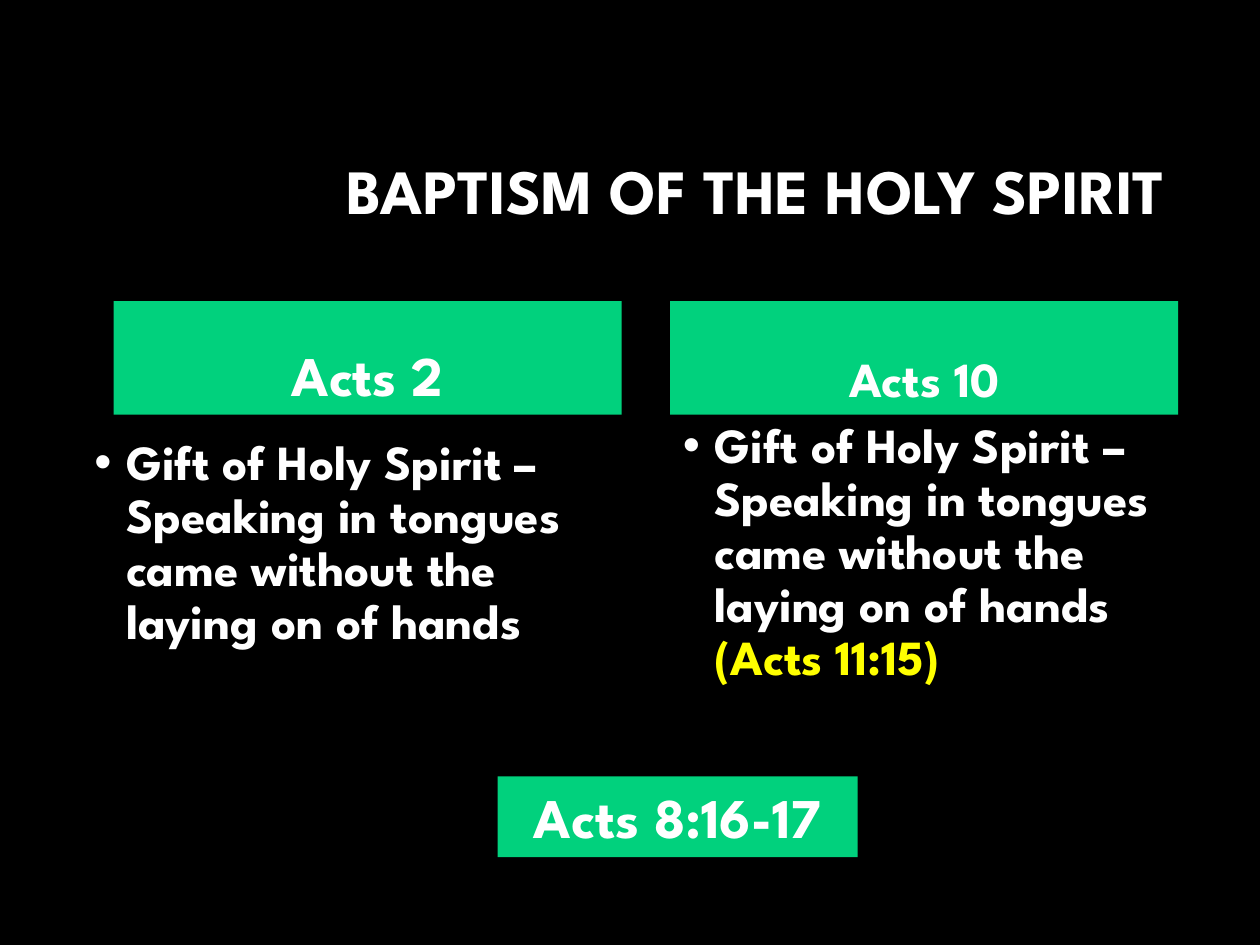
from pptx import Presentation
from pptx.dml.color import RGBColor
from pptx.enum.text import MSO_ANCHOR, MSO_AUTO_SIZE, PP_ALIGN
from pptx.util import Cm, Pt

BLACK = RGBColor(0x00, 0x00, 0x00)
WHITE = RGBColor(0xFF, 0xFF, 0xFF)
GREEN = RGBColor(0x01, 0xD1, 0x7D)
YELLOW = RGBColor(0xFF, 0xFF, 0x00)
FONT = "League Spartan"

TITLE = "BAPTISM OF THE HOLY SPIRIT"
GIFT = "Gift of Holy Spirit – Speaking in tongues came without the laying on of hands"
HEADS = [
    (1, "Acts 2", 32, 2.29),
    (3, "Acts 10", 28, 13.51),
]
LISTS = [
    (2, [(GIFT, WHITE)], 1.65, 8.71),
    (4, [(GIFT + " ", WHITE), ("(Acts 11:15)", YELLOW)], 13.51, 8.36),
]
NOTE = "Acts 8:16-17"


def place(shape, left, top, width, height):
    shape.left, shape.top = Cm(left), Cm(top)
    shape.width, shape.height = Cm(width), Cm(height)


def write(shape, parts, size, align, anchor, space=0.9):
    frame = shape.text_frame
    frame.word_wrap = True
    frame.auto_size = MSO_AUTO_SIZE.NONE
    frame.vertical_anchor = anchor
    para = frame.paragraphs[0]
    para.alignment = align
    para.line_spacing = space
    para.space_before = Pt(0)
    for text, color in parts:
        run = para.add_run()
        run.text = text
        run.font.name = FONT
        run.font.size = Pt(size)
        run.font.bold = True
        run.font.color.rgb = color
    return para


def paint(shape):
    shape.fill.solid()
    shape.fill.fore_color.rgb = GREEN


def main():
    deck = Presentation()
    deck.slide_width, deck.slide_height = Cm(25.4), Cm(19.05)
    slide = deck.slides.add_slide(deck.slide_layouts.get_by_name("Comparison"))
    slide.background.fill.solid()
    slide.background.fill.fore_color.rgb = BLACK
    holders = {item.placeholder_format.idx: item for item in slide.placeholders}

    title = slide.shapes.title
    place(title, 6.05, 2.11, 17.7, 3.61)
    write(title, [(TITLE, WHITE)], 36, PP_ALIGN.RIGHT, MSO_ANCHOR.MIDDLE)

    for key, text, size, left in HEADS:
        head = holders[key]
        place(head, left, 6.07, 10.24, 2.29)
        paint(head)
        write(head, [(text, WHITE)], size, PP_ALIGN.CENTER, MSO_ANCHOR.BOTTOM)

    for key, parts, left, top in LISTS:
        body = holders[key]
        place(body, left, top, 10.86, 8.69)
        para = write(body, parts, 28, PP_ALIGN.LEFT, MSO_ANCHOR.TOP)
        props = para._p.get_or_add_pPr()
        props.set("marL", str(Cm(0.64)))
        props.set("indent", str(Cm(-0.64)))

    note = slide.shapes.add_textbox(Cm(10.03), Cm(15.65), Cm(7.26), Cm(1.63))
    paint(note)
    write(note, [(NOTE, WHITE)], 32, PP_ALIGN.CENTER, MSO_ANCHOR.TOP, 1.0)

    deck.save("out.pptx")


if __name__ == "__main__":
    main()
